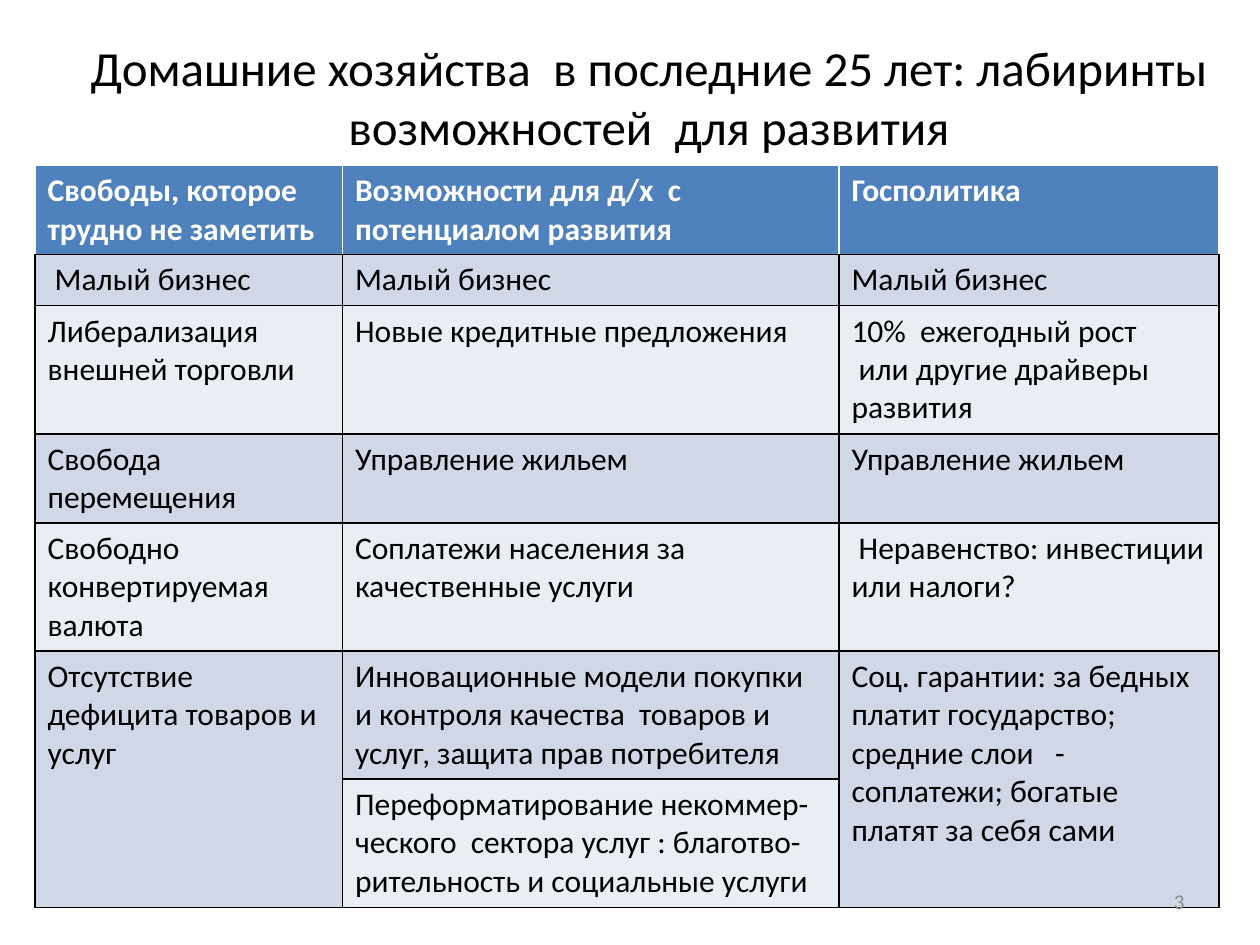
from dataclasses import dataclass

from lxml.etree import SubElement
from pptx import Presentation
from pptx.dml.color import RGBColor as Rgb
from pptx.enum.text import MSO_ANCHOR as Anchor, PP_ALIGN as Align
from pptx.oxml.ns import qn
from pptx.util import Pt

COLORS = {
    "ink": "000000",
    "white": "FFFFFF",
    "header": "4F81BD",
    "dark_band": "D0D8E8",
    "light_band": "E9EDF4",
    "number": "898989",
}
COLUMN_WIDTHS = [175.7, 283.7, 217.2]
ROW_HEIGHTS = [51, 29.2, 73.2, 51, 73.2, 73.2, 73.2]
ROWS = [
    ["Свободы, которое трудно не заметить", "Возможности для д/х  с потенциалом развития", "Госполитика"],
    [" Малый бизнес", "Малый бизнес", "Малый бизнес"],
    ["Либерализация внешней торговли", "Новые кредитные предложения",
     "10%  ежегодный рост\n или другие драйверы развития"],
    ["Свобода перемещения", "Управление жильем", "Управление жильем"],
    ["Свободно конвертируемая валюта", "Соплатежи населения за качественные услуги",
     " Неравенство: инвестиции или налоги?"],
    ["Отсутствие дефицита товаров и услуг",
     "Инновационные модели покупки и контроля качества  товаров и услуг, защита прав потребителя",
     "Соц. гарантии: за бедных платит государство; средние слои   - соплатежи; богатые платят за себя сами"],
    ["", "Переформатирование некоммер- ческого  сектора услуг : благотво- рительность и социальные услуги", ""],
]
MERGED_COLUMNS = (0, 2)


@dataclass
class Label:
    text: str
    left: float
    top: float
    width: float
    height: float
    size: float
    color: str
    align: Align


LABELS = [
    Label("Домашние хозяйства  в последние 25 лет: лабиринты возможностей  для развития",
          36, 21.6, 669.6, 67, 28, "ink", Align.CENTER),
    Label("3", 516, 500.5, 168, 28.75, 12, "number", Align.RIGHT),
]


def write_text(frame, text: str, size: float, color: str, bold: bool = False, align: Align = Align.LEFT) -> None:
    font_format = {"name": "Calibri", "size": Pt(size), "bold": bold}
    frame.text = text
    for para in frame.paragraphs:
        para.alignment = align
        for span in para.runs:
            for name, value in font_format.items():
                setattr(span.font, name, value)
            span.font.color.rgb = Rgb.from_string(COLORS[color])


def draw_label(page, label: Label) -> None:
    box = page.shapes.add_textbox(Pt(label.left), Pt(label.top), Pt(label.width), Pt(label.height))
    for name, value in {"word_wrap": True, "vertical_anchor": Anchor.MIDDLE}.items():
        setattr(box.text_frame, name, value)
    write_text(box.text_frame, label.text, label.size, label.color, align=label.align)


def draw_borders(cell, sides: dict[str, str]) -> None:
    properties = cell._tc.get_or_add_tcPr()
    for side, color in sides.items():
        line = SubElement(properties, qn(f"a:{side}"), w=str(Pt(1)))
        fill = SubElement(line, qn("a:solidFill"))
        SubElement(fill, qn("a:srgbClr"), val=COLORS[color])


def draw_cell(cell, text: str, row: int) -> None:
    is_header = row == 0
    band = "header" if is_header else "dark_band" if row % 2 else "light_band"
    edge = "white" if is_header else "ink"
    top = "white" if is_header else "ink"
    draw_borders(cell, {"lnL": edge, "lnR": edge, "lnT": top, "lnB": "ink"})
    cell.fill.solid()
    cell.fill.fore_color.rgb = Rgb.from_string(COLORS[band])
    write_text(cell.text_frame, text, 18, "white" if is_header else "ink", is_header)


def draw_table(page) -> None:
    frame = page.shapes.add_table(len(ROWS), len(COLUMN_WIDTHS), Pt(20), Pt(94.5),
                                  Pt(sum(COLUMN_WIDTHS)), Pt(sum(ROW_HEIGHTS)))
    table = frame.table
    for column, width in zip(table.columns, COLUMN_WIDTHS):
        column.width = Pt(width)
    for row, height in zip(table.rows, ROW_HEIGHTS):
        row.height = Pt(height)
    for row, texts in enumerate(ROWS):
        for column, text in enumerate(texts):
            draw_cell(table.cell(row, column), text, row)
    last = len(ROWS) - 1
    for column in MERGED_COLUMNS:
        table.cell(last - 1, column).merge(table.cell(last, column))


def main() -> None:
    deck = Presentation()
    for name, value in {"slide_width": Pt(720), "slide_height": Pt(540)}.items():
        setattr(deck, name, value)
    page = deck.slides.add_slide(deck.slide_layouts[6])
    title, number = LABELS
    draw_label(page, title)
    draw_table(page)
    draw_label(page, number)
    deck.save("out.pptx")


if __name__ == "__main__":
    main()
